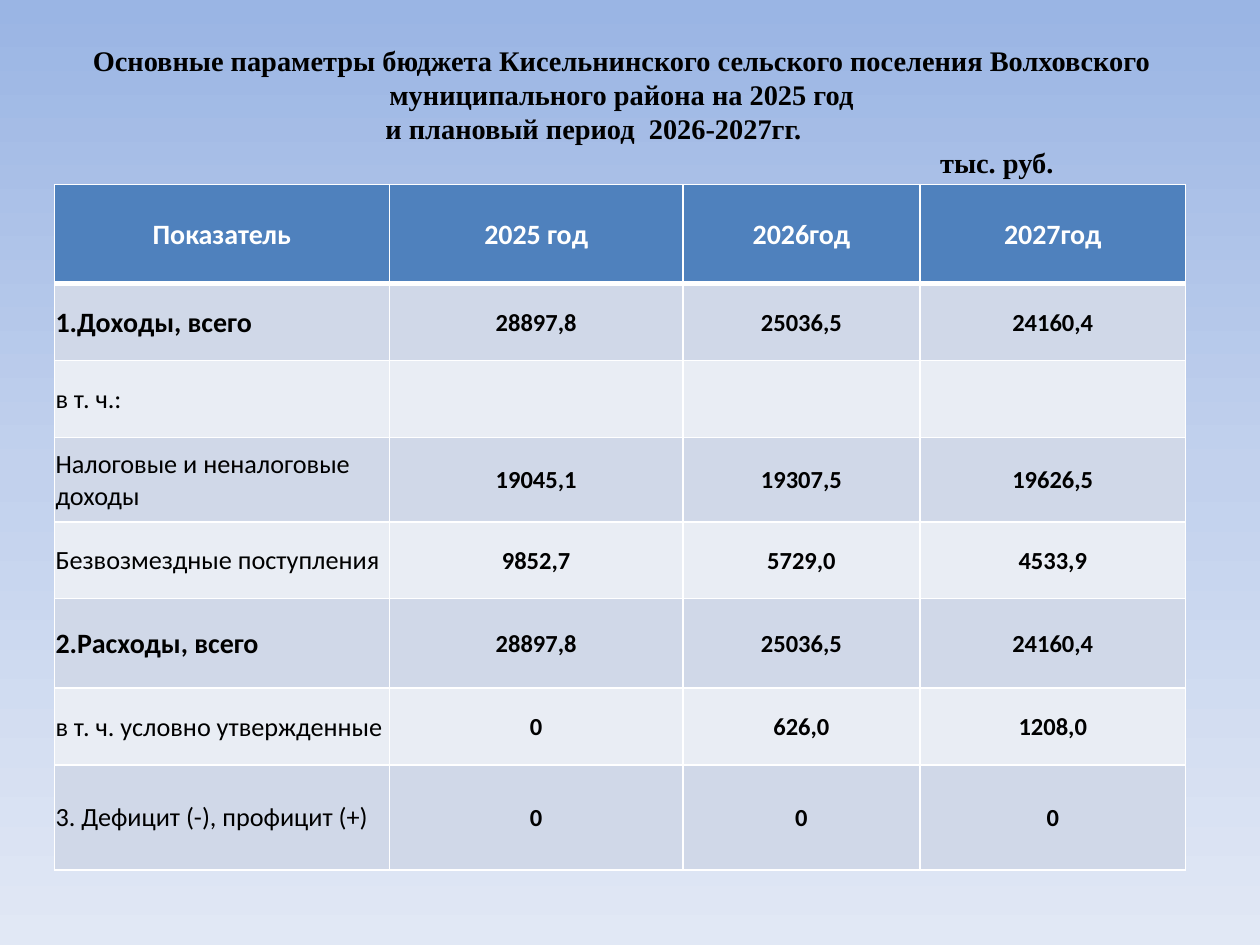
import copy
import pptx
import pptx.util
import pptx.dml.color
import pptx.enum.text
import pptx.oxml
import pptx.oxml.ns

Pt = pptx.util.Pt
ALIGN = pptx.enum.text.PP_ALIGN
MIDDLE = pptx.enum.text.MSO_ANCHOR.MIDDLE

BACKGROUND = [(0, "9AB5E4"), (0.5, "C2D1ED"), (1, "E1E8F5")]
TITLE_LINES = [
    ("Основные параметры бюджета Кисельнинского сельского поселения "
     "Волховского муниципального района на 2025 год", ALIGN.CENTER, 0),
    ("и плановый период  2026-2027гг.", ALIGN.LEFT, 182),
    ("тыс. руб.", ALIGN.LEFT, 499),
]
COLUMN_WIDTHS = [191.5, 167.8, 135.4, 151.9]
ROW_HEIGHTS = [56.6, 43.9, 43.9, 48.2, 43.9, 51.1, 43.9, 60]
ROWS = [
    ["Показатель", "2025 год", "2026год", "2027год"],
    ["1.Доходы, всего", "28897,8", "25036,5", "24160,4"],
    ["в т. ч.:", "", "", ""],
    ["Налоговые и неналоговые доходы", "19045,1", "19307,5", "19626,5"],
    ["Безвозмездные поступления", "9852,7", "5729,0", "4533,9"],
    ["2.Расходы, всего", "28897,8", "25036,5", "24160,4"],
    ["в т. ч. условно утвержденные", "0", "626,0", "1208,0"],
    ["3. Дефицит (-), профицит (+)", "0", "0", "0"],
]
TOTAL_ROWS = (1, 5)


def color(value):
    return pptx.dml.color.RGBColor.from_string(value)


def add_text(para, text, font, size, fill, bold):
    span = para.add_run()
    span.text = text
    span.font.name = font
    span.font.size = Pt(size)
    span.font.bold = bold
    span.font.color.rgb = color(fill)


def paint_background(page):
    fill = page.background.fill
    fill.gradient()
    fill.gradient_angle = 270
    stop_list = page._element.xpath(".//a:gsLst")[0]
    stop_list.append(copy.deepcopy(stop_list[-1]))
    for stop, (position, value) in zip(fill.gradient_stops, BACKGROUND):
        stop.position = position
        stop.color.rgb = color(value)


def place_title(page, left, top, width, height):
    title = page.shapes.title
    title.left, title.top, title.width, title.height = map(Pt, (left, top, width, height))
    frame = title.text_frame
    frame.word_wrap = True
    frame.auto_size = pptx.enum.text.MSO_AUTO_SIZE.NONE
    frame.vertical_anchor = MIDDLE
    for index, (text, alignment, indent) in enumerate(TITLE_LINES):
        para = frame.add_paragraph() if index else frame.paragraphs[0]
        para.alignment = alignment
        para.line_spacing = Pt(19.4)
        para.space_before = Pt(0)
        para._p.get_or_add_pPr().set("marL", str(Pt(indent)))
        add_text(para, text, "Times New Roman", 16.2, "000000", True)


def set_borders(cell, bottom_width):
    properties = cell._tc.get_or_add_tcPr()
    sides = {"lnL": 1, "lnR": 1, "lnT": 1, "lnB": bottom_width}
    for index, (side, width) in enumerate(sides.items()):
        properties.insert(index, pptx.oxml.parse_xml(
            f'<a:{side} {pptx.oxml.ns.nsdecls("a")} w="{Pt(width)}">'
            f'<a:solidFill><a:srgbClr val="FFFFFF"/></a:solidFill></a:{side}>'))


def format_cell(cell, text, row, column):
    header = row == 0
    cell.fill.solid()
    cell.fill.fore_color.rgb = color(
        "4F81BD" if header else "D0D8E8" if row % 2 else "E9EDF4")
    set_borders(cell, 3 if header else 1)
    cell.vertical_anchor = MIDDLE
    cell.margin_left = cell.margin_right = cell.margin_top = Pt(0.72)
    cell.margin_bottom = Pt(0)
    if not text:
        return
    label = column == 0 and not header
    strong = header or row in TOTAL_ROWS
    size = 16 if header else 14 if not label else 16 if strong else 15
    para = cell.text_frame.paragraphs[0]
    para.alignment = ALIGN.LEFT if label else ALIGN.CENTER
    add_text(para, text, "Calibri", size, "FFFFFF" if header else "000000",
             strong or not label)


def place_table(page, left, top, width, height):
    table = page.shapes.add_table(
        len(ROWS), len(COLUMN_WIDTHS), Pt(left), Pt(top), Pt(width), Pt(height)).table
    for column, share in zip(table.columns, COLUMN_WIDTHS):
        column.width = Pt(width * share / sum(COLUMN_WIDTHS))
    for row, share in zip(table.rows, ROW_HEIGHTS):
        row.height = Pt(height * share / sum(ROW_HEIGHTS))
    for row, texts in enumerate(ROWS):
        for column, text in enumerate(texts):
            format_cell(table.cell(row, column), text, row, column)


def main():
    deck = pptx.Presentation()
    deck.slide_width, deck.slide_height = Pt(720), Pt(540)
    page = deck.slides.add_slide(deck.slide_layouts[5])
    paint_background(page)
    place_title(page, 31, 21, 648, 85)
    place_table(page, 31, 105.5, 646.6, 391.7)
    deck.save("out.pptx")


if __name__ == "__main__":
    main()
